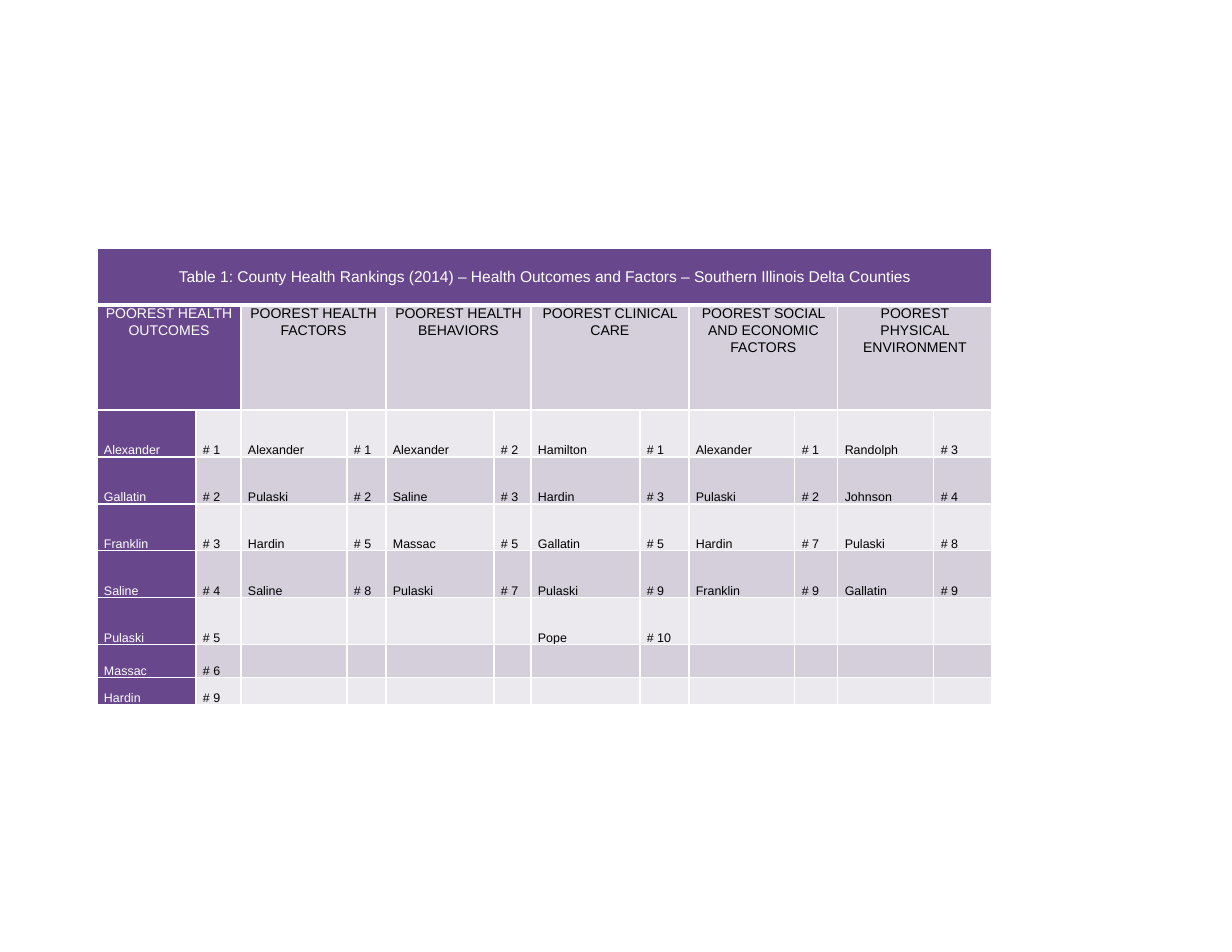
from lxml import etree
from pptx import Presentation
from pptx import util as u
from pptx.dml.color import RGBColor
from pptx.enum import text
from pptx.oxml.ns import qn

PX = 914400 // 112
COLORS = {"purple": "68478D", "band": "D4CFDB", "light": "EBE9EE",
          "white": "FFFFFF", "black": "000000"}
FONT = "Arial"

TITLE = ("Table 1: County Health Rankings (2014) – Health Outcomes and Factors"
         " – Southern Illinois Delta Counties")
RANKINGS = {
    "POOREST HEALTH OUTCOMES": [("Alexander", 1), ("Gallatin", 2), ("Franklin", 3), ("Saline", 4),
                                ("Pulaski", 5), ("Massac", 6), ("Hardin", 9)],
    "POOREST HEALTH FACTORS": [("Alexander", 1), ("Pulaski", 2), ("Hardin", 5), ("Saline", 8)],
    "POOREST HEALTH BEHAVIORS": [("Alexander", 2), ("Saline", 3), ("Massac", 5), ("Pulaski", 7)],
    "POOREST CLINICAL CARE": [("Hamilton", 1), ("Hardin", 3), ("Gallatin", 5), ("Pulaski", 9),
                              ("Pope", 10)],
    "POOREST SOCIAL AND ECONOMIC FACTORS": [("Alexander", 1), ("Pulaski", 2), ("Hardin", 7),
                                            ("Franklin", 9)],
    "POOREST PHYSICAL ENVIRONMENT": [("Randolph", 3), ("Johnson", 4), ("Pulaski", 8),
                                     ("Gallatin", 9)],
}
COLUMN_WIDTHS = [99, 45, 106, 39, 108, 37, 109, 49, 106, 43, 96, 58]
ROW_HEIGHTS = [57, 105] + [47] * 5 + [33, 27]


def rgb(name):
    return RGBColor.from_string(COLORS[name])


def set_borders(cell, bottom=1):
    """Draw white borders, 1 pt wide except where the bottom differs."""
    tc_pr = cell._tc.get_or_add_tcPr()
    for side, width in (("L", 1), ("R", 1), ("T", 1), ("B", bottom)):
        line = etree.SubElement(tc_pr, qn("a:ln" + side), w=str(u.Pt(width)))
        fill = etree.SubElement(line, qn("a:solidFill"))
        etree.SubElement(fill, qn("a:srgbClr"), val=COLORS["white"])


def style_cell(cell, fill, bottom=1):
    cell.margin_left = cell.margin_right = 7 * PX
    cell.margin_top = cell.margin_bottom = 0
    set_borders(cell, bottom)
    cell.fill.solid()
    cell.fill.fore_color.rgb = rgb(fill)
    # Keeps empty cells from stretching the short rows
    etree.SubElement(cell.text_frame.paragraphs[0]._p, qn("a:endParaRPr"), sz="800")


def write_cell(cell, words, size, color, anchor, align):
    cell.vertical_anchor = anchor
    p = cell.text_frame.paragraphs[0]
    p.text = words
    p.alignment = align
    p.line_spacing = 1.07
    font = p.runs[0].font
    font.name, font.size = FONT, u.Pt(size)
    font.color.rgb = rgb(color)


def cell_fill(row, col):
    if row == 0 or col == 0 or (row == 1 and col == 1):
        return "purple"
    return "band" if row % 2 else "light"


def add_rankings_table(slide, left, top):
    frame = slide.shapes.add_table(len(ROW_HEIGHTS), len(COLUMN_WIDTHS), left * PX, top * PX,
                                   sum(COLUMN_WIDTHS) * PX, sum(ROW_HEIGHTS) * PX)
    table = frame.table
    for column, width in zip(table.columns, COLUMN_WIDTHS):
        column.width = width * PX
    for row, height in zip(table.rows, ROW_HEIGHTS):
        row.height = height * PX
    for r in range(len(ROW_HEIGHTS)):
        for c in range(len(COLUMN_WIDTHS)):
            style_cell(table.cell(r, c), cell_fill(r, c), bottom=1 if r else 3)

    anchors, aligns = text.MSO_ANCHOR, text.PP_ALIGN
    title = table.cell(0, 0)
    title.merge(table.cell(0, len(COLUMN_WIDTHS) - 1))
    write_cell(title, TITLE, 10, "white", anchors.MIDDLE, aligns.CENTER)

    for group, (heading, counties) in enumerate(RANKINGS.items()):
        col = 2 * group
        color = "black" if group else "white"
        header = table.cell(1, col)
        header.merge(table.cell(1, col + 1))
        write_cell(header, heading, 9, color, anchors.TOP, aligns.CENTER)
        for row, (county, rank) in enumerate(counties, start=2):
            write_cell(table.cell(row, col), county, 8, color, anchors.BOTTOM, aligns.LEFT)
            write_cell(table.cell(row, col + 1), f"# {rank}", 8, "black",
                       anchors.BOTTOM, aligns.LEFT)


def main():
    prs = Presentation()
    prs.slide_width, prs.slide_height = u.Inches(11), u.Inches(8.5)
    slide = prs.slides.add_slide(prs.slide_layouts[6])
    add_rankings_table(slide, 97, 248)
    prs.save("out.pptx")


if __name__ == "__main__":
    main()
